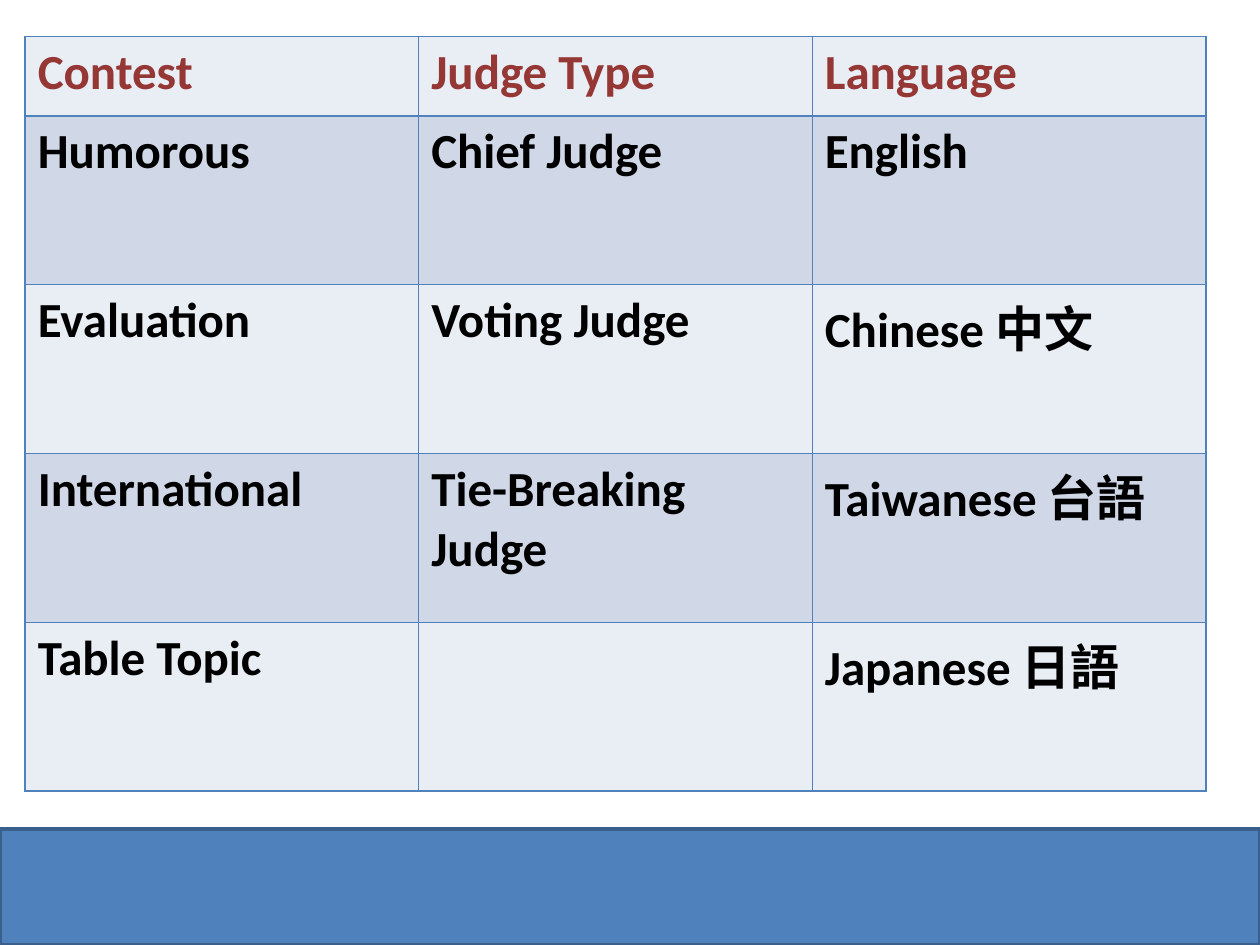
"""Build a slide with a table of contests, judge types and languages."""
import pptx
import pptx.util
import pptx.dml.color
import pptx.enum.shapes
import pptx.oxml
import pptx.oxml.ns

HUES = {"band": "4F81BD", "edge": "3A5F8C", "rule": "4F81BD",
        "head": "953735", "text": "000000", "pale": "E9EDF4", "deep": "D0D8E8"}
ROWS = [
    ("Contest", "Judge Type", "Language"),
    ("Humorous", "Chief Judge", "English"),
    ("Evaluation", "Voting Judge", "Chinese 中文"),
    ("International", "Tie-Breaking Judge", "Taiwanese 台語"),
    ("Table Topic", "", "Japanese 日語"),
]
FONT = {"name": "Calibri", "size": pptx.util.Pt(28), "bold": True}


def hue(name):
    return pptx.dml.color.RGBColor.from_string(HUES[name])


def rule(cell, side):
    line = pptx.oxml.parse_xml(
        f'<a:{side} {pptx.oxml.ns.nsdecls("a")} w="{pptx.util.Pt(1)}">'
        f'<a:solidFill><a:srgbClr val="{HUES["rule"]}"/></a:solidFill></a:{side}>')
    cell._tc.get_or_add_tcPr().append(line)


deck = pptx.Presentation()
deck.slide_width = pptx.util.Inches(10)
deck.slide_height = pptx.util.Inches(7.5)
wide, high = deck.slide_width, deck.slide_height
slide = deck.slides.add_slide(deck.slide_layouts[6])

top = pptx.util.Inches(6.58)
band = slide.shapes.add_shape(
    pptx.enum.shapes.MSO_SHAPE.RECTANGLE, 0, top, wide, high - top)
band.shadow.inherit = False
band.fill.solid()
band.fill.fore_color.rgb = hue("band")
band.line.color.rgb = hue("edge")
band.line.width = pptx.util.Pt(2)

tall = [pptx.util.Inches(0.63)] + [pptx.util.Inches(1.34)] * (len(ROWS) - 1)
grid = slide.shapes.add_table(
    len(ROWS), len(ROWS[0]), pptx.util.Inches(0.2), pptx.util.Inches(0.29),
    pptx.util.Inches(9.37), sum(tall)).table

for r, words in enumerate(ROWS):
    grid.rows[r].height = tall[r]
    for c, word in enumerate(words):
        cell = grid.cell(r, c)
        for side in ("lnL", "lnR", "lnT", "lnB"):
            rule(cell, side)
        cell.fill.solid()
        cell.fill.fore_color.rgb = hue("deep" if r % 2 else "pale")
        cell.text = word
        font = cell.text_frame.paragraphs[0].font
        for key, value in FONT.items():
            setattr(font, key, value)
        font.color.rgb = hue("text" if r else "head")

deck.save("out.pptx")
